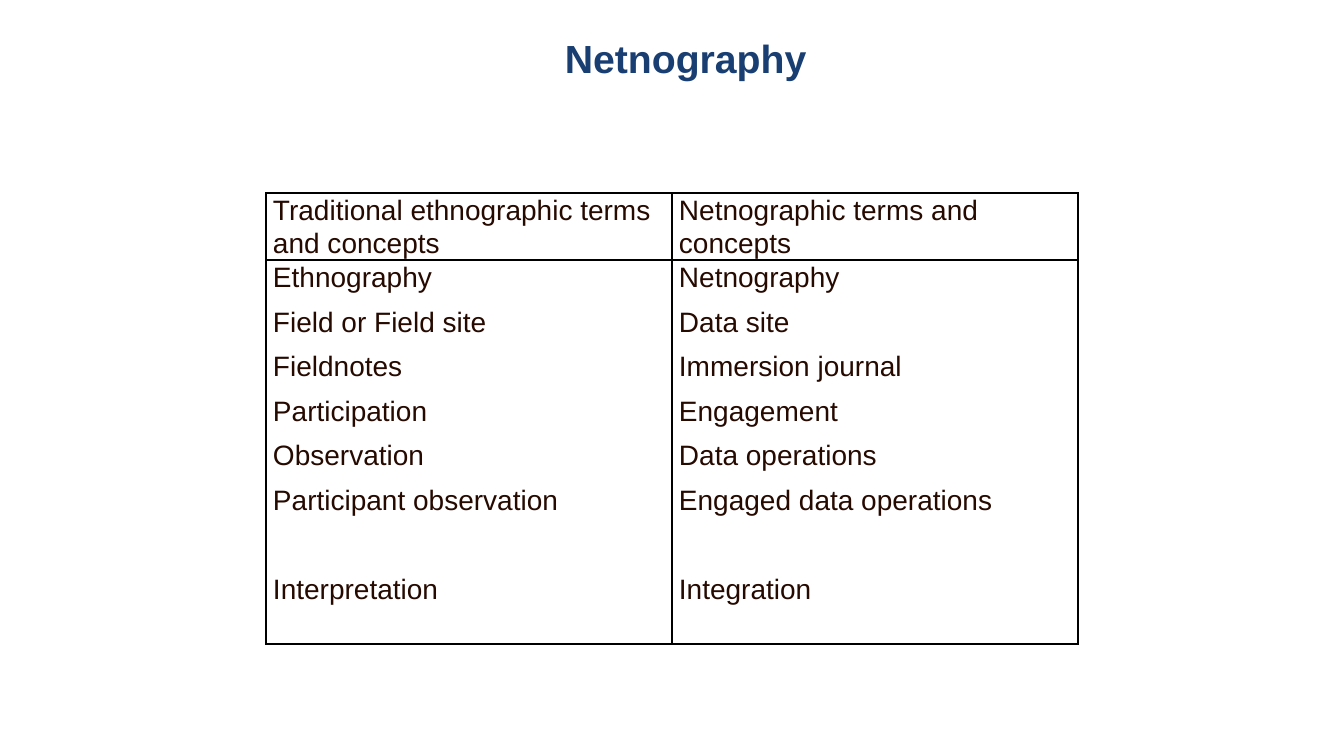
from collections import namedtuple
from dataclasses import dataclass

from lxml.etree import SubElement
from pptx import Presentation
from pptx.dml.color import RGBColor as RGB
from pptx.enum.text import MSO_ANCHOR as Anchor
from pptx.oxml.ns import qn
from pptx.util import Emu, Pt

EMU_PER_PX = 914400 / 100.8
Box = namedtuple("Box", "left top width height")


@dataclass(frozen=True)
class Theme:
    font: str = "Arial"
    title_color: str = "193E72"
    text_color: str = "260A00"
    border_color: str = "000000"
    title_size: int = 28
    text_size: int = 20
    border_width: int = 1


THEME = Theme()

HEADINGS = (
    "Traditional ethnographic terms and concepts",
    "Netnographic terms and concepts",
)
TERM_PAIRS = (
    ("Ethnography", "Netnography"),
    ("Field or Field site", "Data site"),
    ("Fieldnotes", "Immersion journal"),
    ("Participation", "Engagement"),
    ("Observation", "Data operations"),
    ("Participant observation", "Engaged data operations"),
    ("Interpretation", "Integration"),
)
ROW_HEIGHTS = (67, 384)
CELL_FORMAT = {"margin_left": 7, "margin_right": 7, "margin_top": 0, "margin_bottom": 0}
TERM_FORMAT = {"line_spacing": 1.07, "space_after": Pt(8)}
CONCLUDING_GAP = Pt(32)


def px(length):
    return Emu(round(length * EMU_PER_PX))


def set_font(paragraph, size, color, bold=False):
    font = paragraph.font
    for name, value in {"name": THEME.font, "size": Pt(size), "bold": bold}.items():
        setattr(font, name, value)
    font.color.rgb = RGB.from_string(color)


def add_title(slide, box, title):
    frame = slide.shapes.add_textbox(*map(px, box)).text_frame
    frame.word_wrap = True
    frame.vertical_anchor = Anchor.BOTTOM
    heading = frame.paragraphs[0]
    heading.text = title
    heading.line_spacing = 0.9
    set_font(heading, THEME.title_size, THEME.title_color, bold=True)


def add_borders(cell):
    properties = cell._tc.get_or_add_tcPr()
    for side in ("lnL", "lnR", "lnT", "lnB"):
        line = SubElement(properties, qn(f"a:{side}"), w=str(Pt(THEME.border_width)))
        fill = SubElement(line, qn("a:solidFill"))
        SubElement(fill, qn("a:srgbClr"), val=THEME.border_color)


def fill_cell(cell, terms):
    for name, margin in CELL_FORMAT.items():
        setattr(cell, name, px(margin))
    add_borders(cell)
    cell.fill.background()
    frame = cell.text_frame
    for index, term in enumerate(terms):
        paragraph = frame.add_paragraph() if index else frame.paragraphs[0]
        paragraph.text = term
        for name, value in TERM_FORMAT.items():
            setattr(paragraph, name, value)
        set_font(paragraph, THEME.text_size, THEME.text_color)
    return frame.paragraphs


def add_terms_table(slide, box):
    """Set each heading above one cell that lists all terms of its column."""
    table = slide.shapes.add_table(2, len(HEADINGS), *map(px, box)).table
    table.first_row = table.horz_banding = False
    for row, height in zip(table.rows, ROW_HEIGHTS):
        row.height = px(height)
    for column, (heading, terms) in enumerate(zip(HEADINGS, zip(*TERM_PAIRS))):
        table.columns[column].width = px(box.width // len(HEADINGS))
        fill_cell(table.cell(0, column), [heading])
        paragraphs = fill_cell(table.cell(1, column), terms)
        paragraphs[-1].space_before = CONCLUDING_GAP


def main():
    deck = Presentation()
    deck.slide_width, deck.slide_height = px(1344), px(756)
    slide = deck.slides.add_slide(deck.slide_layouts[6])
    add_terms_table(slide, Box(266, 193, 812, sum(ROW_HEIGHTS)))
    add_title(slide, Box(555, 17, 545, 70), "Netnography")
    deck.save("out.pptx")


if __name__ == "__main__":
    main()
